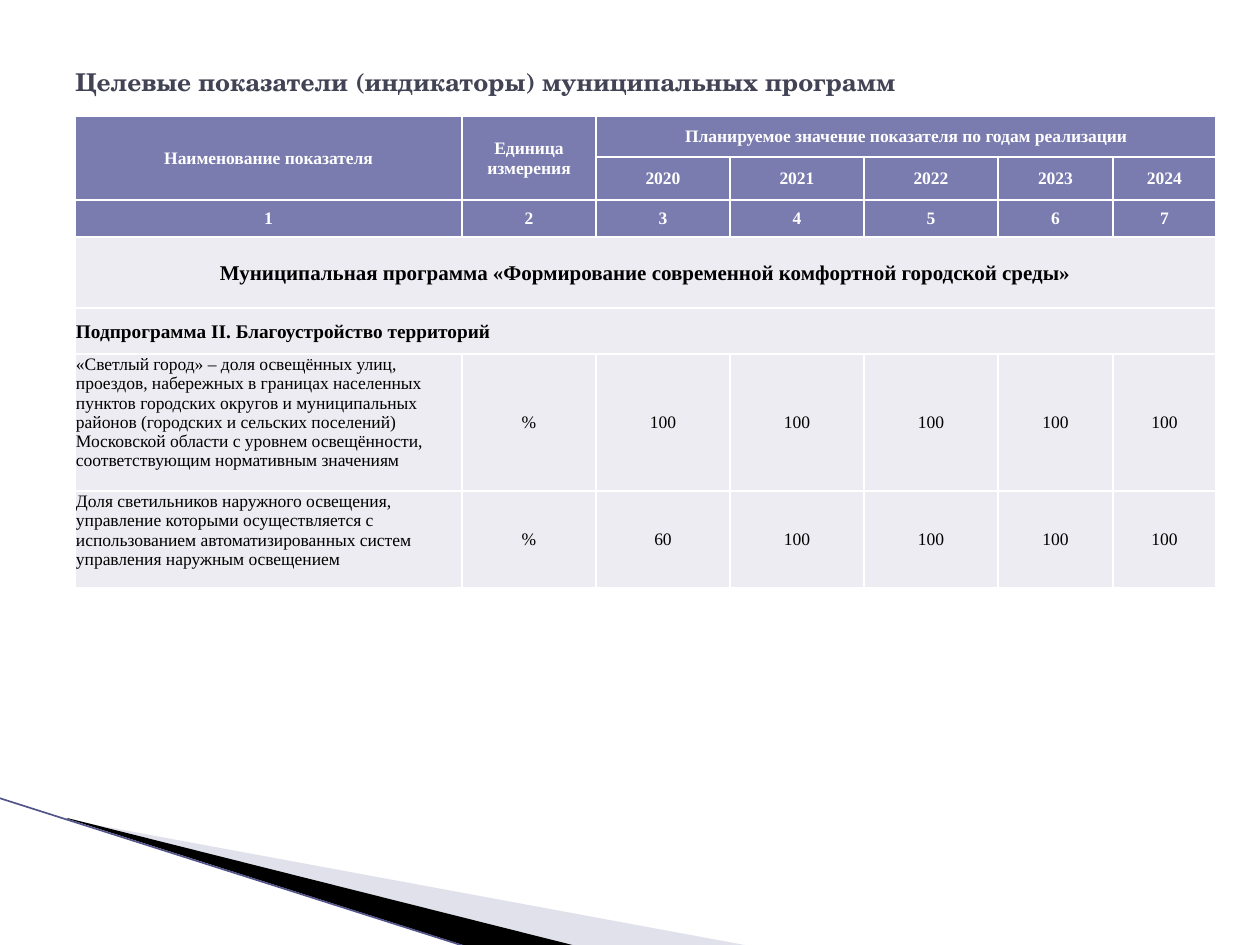
from lxml import etree
from pptx import Presentation
from pptx import util as u
from pptx.dml.color import RGBColor
from pptx.enum import shapes, text
from pptx.oxml import ns

PX = u.Inches(1) / 126
COLORS = {"title": "424456", "header": "7A7BAE", "body": "ECECF2", "wedge": "B6B6D1",
          "edge": "53548A", "white": "FFFFFF", "black": "000000"}
TITLE = {"name": "TeX Gyre Schola", "size": u.Pt(14), "bold": True}
CELL = {"name": "Times New Roman", "size": u.Pt(10), "bold": False}
HEAD = {**CELL, "bold": True}
PROGRAM = {**HEAD, "size": u.Pt(12)}
SUBPROGRAM = {**HEAD, "size": u.Pt(11)}
CENTER, LEFT = text.PP_ALIGN.CENTER, text.PP_ALIGN.LEFT
MIDDLE, TOP = text.MSO_ANCHOR.MIDDLE, text.MSO_ANCHOR.TOP


def px(n):
    return u.Emu(round(n * PX))


def rgb(name):
    return RGBColor.from_string(COLORS[name])


def add_el(parent, tag, **attrs):
    return etree.SubElement(parent, ns.qn(tag), attrs)


class Deck:
    def __init__(self, width, height):
        self.prs = Presentation()
        self.prs.slide_width, self.prs.slide_height = px(width), px(height)
        self.s = self.prs.slides.add_slide(self.prs.slide_layouts[6])

    def add_text(self, p, words, fmt, color, align=LEFT):
        p.alignment = align
        r = p.add_run()
        r.text = words
        for key, value in fmt.items():
            setattr(r.font, key, value)
        r.font.color.rgb = rgb(color)

    def textbox(self, box, words, fmt, color):
        tf = self.s.shapes.add_textbox(*map(px, box)).text_frame
        tf.word_wrap = True
        tf.vertical_anchor = MIDDLE
        self.add_text(tf.paragraphs[0], words, fmt, color)

    def polygon(self, points, color, alpha=None):
        fb = self.s.shapes.build_freeform(*points[0], scale=PX)
        fb.add_line_segments(points[1:], close=True)
        sp = fb.convert_to_shape()
        sp.shadow.inherit = False
        sp.line.fill.background()
        sp.fill.solid()
        sp.fill.fore_color.rgb = rgb(color)
        if alpha:
            clr = sp._element.spPr.find(".//" + ns.qn("a:srgbClr"))
            add_el(clr, "a:alpha", val=str(alpha * 1000))

    def line(self, start, end, color, width):
        c = self.s.shapes.add_connector(shapes.MSO_CONNECTOR.STRAIGHT, *map(px, start + end))
        c.line.color.rgb = rgb(color)
        c.line.width = u.Pt(width)
        add_el(c._element.spPr, "a:effectLst")

    def table(self, left, top, cols, rows):
        frame = self.s.shapes.add_table(len(rows), len(cols), px(left), px(top),
                                        px(sum(cols)), px(sum(rows)))
        tbl = frame.table
        for col, width in zip(tbl.columns, cols):
            col.width = px(width)
        for row, height in zip(tbl.rows, rows):
            row.height = px(height)
        return tbl

    def style_cell(self, cell, fill):
        for side in ("left", "right", "top"):
            setattr(cell, f"margin_{side}", px(1))
        cell.margin_bottom = 0
        tcPr = cell._tc.get_or_add_tcPr()
        for side in "LRTB":
            ln = add_el(tcPr, f"a:ln{side}", w=str(u.Pt(1)))
            add_el(add_el(ln, "a:solidFill"), "a:srgbClr", val=COLORS["white"])
        cell.fill.solid()
        cell.fill.fore_color.rgb = rgb(fill)

    def fill_cell(self, cell, words, fmt, color, align=CENTER, anchor=MIDDLE):
        cell.vertical_anchor = anchor
        self.add_text(cell.text_frame.paragraphs[0], words, fmt, color, align)


def main():
    deck = Deck(1260, 945)
    deck.polygon([(69, 820), (750, 946), (575, 946), (69, 819)], "wedge", 40)
    deck.polygon([(67, 818), (576, 946), (469, 947), (68, 819)], "black")
    deck.line((-1, 798), (467, 947), "edge", 0.95)
    deck.textbox((63, 38, 1134, 87), "Целевые показатели (индикаторы) муниципальных программ",
                 TITLE, "title")

    cols = [387, 134, 134, 134, 134, 115, 103]
    tbl = deck.table(75, 116, cols, [41, 40, 37, 71, 46, 137, 97])
    for i, row in enumerate(tbl.rows):
        for cell in row.cells:
            deck.style_cell(cell, "header" if i < 3 else "body")
    for first, last in [((0, 0), (1, 0)), ((0, 1), (1, 1)), ((0, 2), (0, 6)),
                        ((3, 0), (3, 6)), ((4, 0), (4, 6))]:
        tbl.cell(*first).merge(tbl.cell(*last))

    for col, words in enumerate(["Наименование показателя", "Единица измерения",
                                 "Планируемое значение показателя по годам реализации"]):
        deck.fill_cell(tbl.cell(0, col), words, HEAD, "white")
    for col, year in enumerate(range(2020, 2025), 2):
        deck.fill_cell(tbl.cell(1, col), str(year), HEAD, "white")
    for col in range(len(cols)):
        deck.fill_cell(tbl.cell(2, col), str(col + 1), HEAD, "white")

    deck.fill_cell(tbl.cell(3, 0), "Муниципальная программа «Формирование современной "
                   "комфортной городской среды»", PROGRAM, "black")
    deck.fill_cell(tbl.cell(4, 0), "Подпрограмма II. Благоустройство территорий",
                   SUBPROGRAM, "black", LEFT)
    indicators = [
        ("«Светлый город» – доля освещённых улиц, проездов, набережных в границах населенных "
         "пунктов городских округов и муниципальных районов (городских и сельских поселений) "
         "Московской области с уровнем освещённости, соответствующим нормативным значениям",
         ["%", 100, 100, 100, 100, 100]),
        ("Доля светильников наружного освещения, управление которыми осуществляется с "
         "использованием автоматизированных систем управления наружным освещением",
         ["%", 60, 100, 100, 100, 100]),
    ]
    for row, (name, values) in enumerate(indicators, 5):
        deck.fill_cell(tbl.cell(row, 0), name, CELL, "black", LEFT, TOP)
        for col, value in enumerate(values, 1):
            deck.fill_cell(tbl.cell(row, col), str(value), CELL, "black")

    deck.prs.save("out.pptx")


if __name__ == "__main__":
    main()
